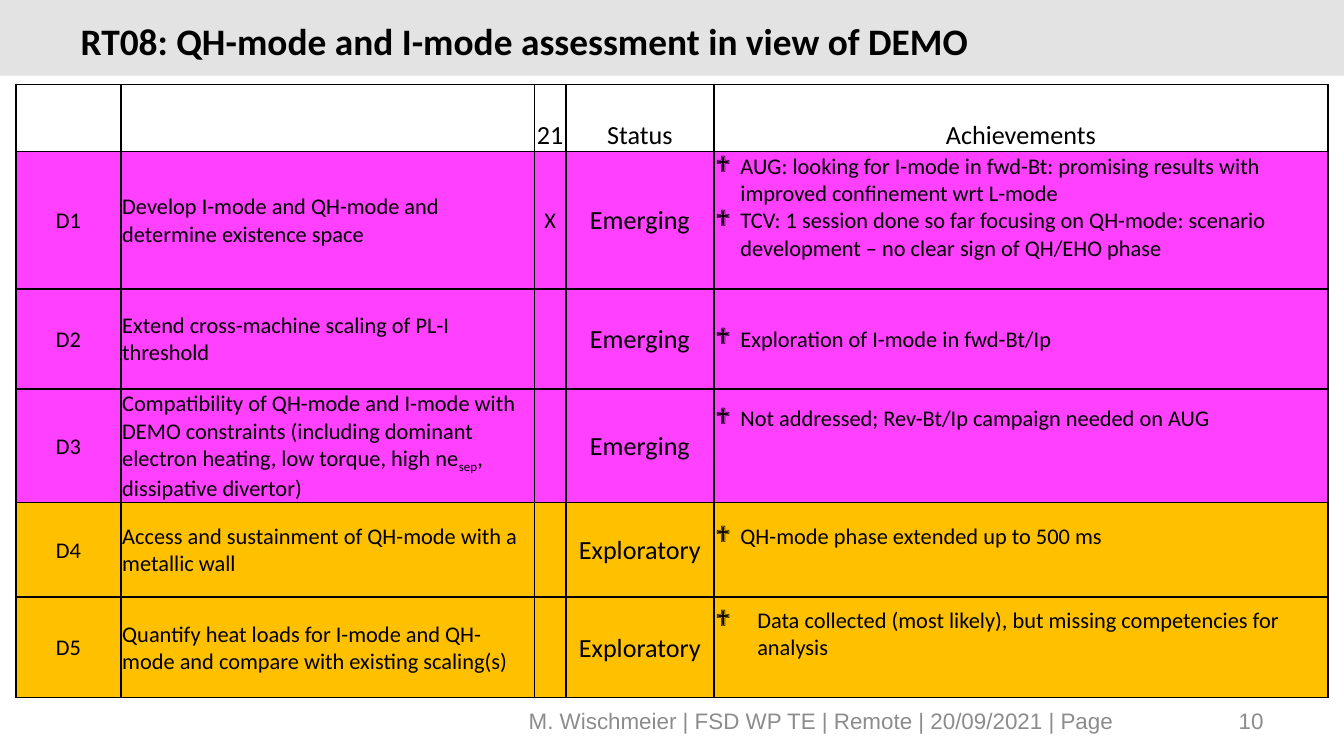
"""Build the RT08 status slide."""
import pptx
import pptx.dml.color
import pptx.enum.shapes
import pptx.enum.text
import pptx.oxml
import pptx.oxml.ns
import pptx.util

Pt = pptx.util.Pt
ALIGN = pptx.enum.text.PP_ALIGN
ANCHOR = pptx.enum.text.MSO_ANCHOR
COLORS = {
    "bar": "E3E3E3",
    "text": "000000",
    "footer": "8C8C8C",
    "border": "000000",
    "emerging": "FF40FF",
    "exploratory": "FFC000",
}
LINE = 14.65
COLUMN_WIDTHS = [56.25, 221.5, 17, 79.25, 329]
ROW_HEIGHTS = [36, 73.5, 53.75, 60.75, 50.75, 53.75]
HEADERS = ["", "", "21", "Status", "Achievements"]
# Deliverable, objective runs, 2021 mark, status, achievements, indent, lines of space below
DELIVERABLES = [
    ("D1", ["Develop I-mode and QH-mode and determine existence space"], "X", "Emerging",
     ["AUG: looking for I-mode in fwd-Bt: promising results with improved confinement wrt L-mode",
      "TCV: 1 session done so far focusing on QH-mode: scenario development – no clear sign of QH/EHO phase"],
     13.5, 1),
    ("D2", ["Extend cross-machine scaling of PL-I threshold"], "", "Emerging",
     ["Exploration of I-mode in fwd-Bt/Ip"], 13.5, 0),
    ("D3", ["Compatibility of QH-mode and I-mode with DEMO constraints (including dominant "
            "electron heating, low torque, high ne", "sep", ", dissipative divertor)"], "", "Emerging",
     ["Not addressed; Rev-Bt/Ip campaign needed on AUG"], 13.5, 2),
    ("D4", ["Access and sustainment of QH-mode with a metallic wall"], "", "Exploratory",
     ["QH-mode phase extended up to 500 ms"], 13.5, 1),
    ("D5", ["Quantify heat loads for I-mode and QH-mode and compare with existing scaling(s)"], "",
     "Exploratory", ["Data collected (most likely), but missing competencies for analysis"], 22.5, 1),
]


def color(name):
    """Return the named colour."""
    return pptx.dml.color.RGBColor.from_string(COLORS[name])


def write(paragraph, text, size=12, font="Calibri", fill="text", bold=False,
          align=ALIGN.LEFT, subscript=False):
    """Add one formatted run to a paragraph."""
    paragraph.alignment = align
    run = paragraph.add_run()
    run.text = text
    run.font.size = Pt(size)
    run.font.name = font
    run.font.bold = bold
    run.font.color.rgb = color(fill)
    if subscript:
        run._r.get_or_add_rPr().set("baseline", "-25000")


def add_bullet(paragraph, indent):
    """Give a paragraph a hanging diamond bullet."""
    properties = paragraph._p.get_or_add_pPr()
    properties.set("marL", str(Pt(indent)))
    properties.set("indent", str(-Pt(indent)))
    namespace = pptx.oxml.ns.nsdecls("a")
    properties.append(pptx.oxml.parse_xml(f'<a:buFont {namespace} typeface="Wingdings"/>'))
    properties.append(pptx.oxml.parse_xml(f'<a:buChar {namespace} char="❖"/>'))


class StatusSlide:
    """Holds the style and the current slide."""

    def __init__(self, presentation):
        """Start a title-only slide."""
        self.slide = presentation.slides.add_slide(presentation.slide_layouts[5])
        self.shapes = self.slide.shapes

    def bar(self, left, top, width, height):
        """Add the header bar behind the title."""
        shape = self.shapes.add_shape(pptx.enum.shapes.MSO_SHAPE.RECTANGLE,
                                      Pt(left), Pt(top), Pt(width), Pt(height))
        shape.shadow.inherit = False
        shape.fill.solid()
        shape.fill.fore_color.rgb = color("bar")
        shape.line.fill.background()
        self.shapes._spTree.insert(2, shape._element)

    def title(self, text, left, top, width, height):
        """Place and fill the title placeholder."""
        shape = self.shapes.title
        shape.left, shape.top, shape.width, shape.height = map(Pt, (left, top, width, height))
        frame = shape.text_frame
        frame.auto_size = pptx.enum.text.MSO_AUTO_SIZE.NONE
        frame.vertical_anchor = ANCHOR.MIDDLE
        paragraph = frame.paragraphs[0]
        paragraph.line_spacing = Pt(32)
        write(paragraph, text, size=20, bold=True)

    def footer(self, text, left, top, width, height, align):
        """Add one grey footer text."""
        frame = self.shapes.add_textbox(Pt(left), Pt(top), Pt(width), Pt(height)).text_frame
        frame.word_wrap = True
        frame.vertical_anchor = ANCHOR.MIDDLE
        write(frame.paragraphs[0], text, font="Arial", fill="footer", align=align)

    def cell(self, cell, fill=None, anchor=ANCHOR.MIDDLE, space_below=0):
        """Style a cell and return its first paragraph."""
        cell.margin_left = cell.margin_right = cell.margin_top = Pt(0.75)
        cell.margin_bottom = Pt(space_below)
        cell.vertical_anchor = anchor
        for side in ("lnL", "lnR", "lnT", "lnB"):
            cell._tc.get_or_add_tcPr().append(pptx.oxml.parse_xml(
                f'<a:{side} {pptx.oxml.ns.nsdecls("a")} w="{Pt(1)}"><a:solidFill>'
                f'<a:srgbClr val="{COLORS["border"]}"/></a:solidFill></a:{side}>'))
        if fill:
            cell.fill.solid()
            cell.fill.fore_color.rgb = color(fill)
        else:
            cell.fill.background()
        return cell.text_frame.paragraphs[0]

    def table(self, left, top):
        """Add the table of deliverables."""
        table = self.shapes.add_table(len(ROW_HEIGHTS), len(COLUMN_WIDTHS), Pt(left), Pt(top),
                                      Pt(sum(COLUMN_WIDTHS)), Pt(sum(ROW_HEIGHTS))).table
        for column, width in zip(table.columns, COLUMN_WIDTHS):
            column.width = Pt(width)
        for row, height in zip(table.rows, ROW_HEIGHTS):
            row.height = Pt(height)
        for index, header in enumerate(HEADERS):
            paragraph = self.cell(table.cell(0, index), anchor=ANCHOR.BOTTOM)
            if header:
                write(paragraph, header, size=14, align=ALIGN.CENTER)
        for row, deliverable in enumerate(DELIVERABLES, start=1):
            self.deliverable(table, row, *deliverable)

    def deliverable(self, table, row, name, objective, mark, status, achievements, indent, lines):
        """Fill one deliverable row."""
        fill = status.lower()
        for column, text, size in ((0, name, 12), (2, mark, 12), (3, status, 14)):
            paragraph = self.cell(table.cell(row, column), fill)
            if text:
                write(paragraph, text, size=size, align=ALIGN.CENTER)
        paragraph = self.cell(table.cell(row, 1), fill)
        for index, text in enumerate(objective):
            write(paragraph, text, subscript=index == 1)
        cell = table.cell(row, 4)
        paragraph = self.cell(cell, fill, space_below=lines * LINE)
        for index, text in enumerate(achievements):
            if index:
                paragraph = cell.text_frame.add_paragraph()
            add_bullet(paragraph, indent)
            write(paragraph, text)


def main():
    """Create and save the presentation."""
    presentation = pptx.Presentation()
    presentation.slide_width, presentation.slide_height = Pt(720), Pt(405)
    slide = StatusSlide(presentation)
    slide.bar(0, 0, 720, 40.5)
    slide.title("RT08: QH-mode and I-mode assessment in view of DEMO", 36, 4.25, 594, 27.5)
    slide.footer("M. Wischmeier | FSD WP TE | Remote | 20/09/2021 | Page", 246, 375.25, 388, 21.5,
                 ALIGN.CENTER)
    slide.footer("10", 516, 375.25, 168, 21.5, ALIGN.RIGHT)
    slide.table(8.5, 45.25)
    presentation.save("out.pptx")


if __name__ == "__main__":
    main()
